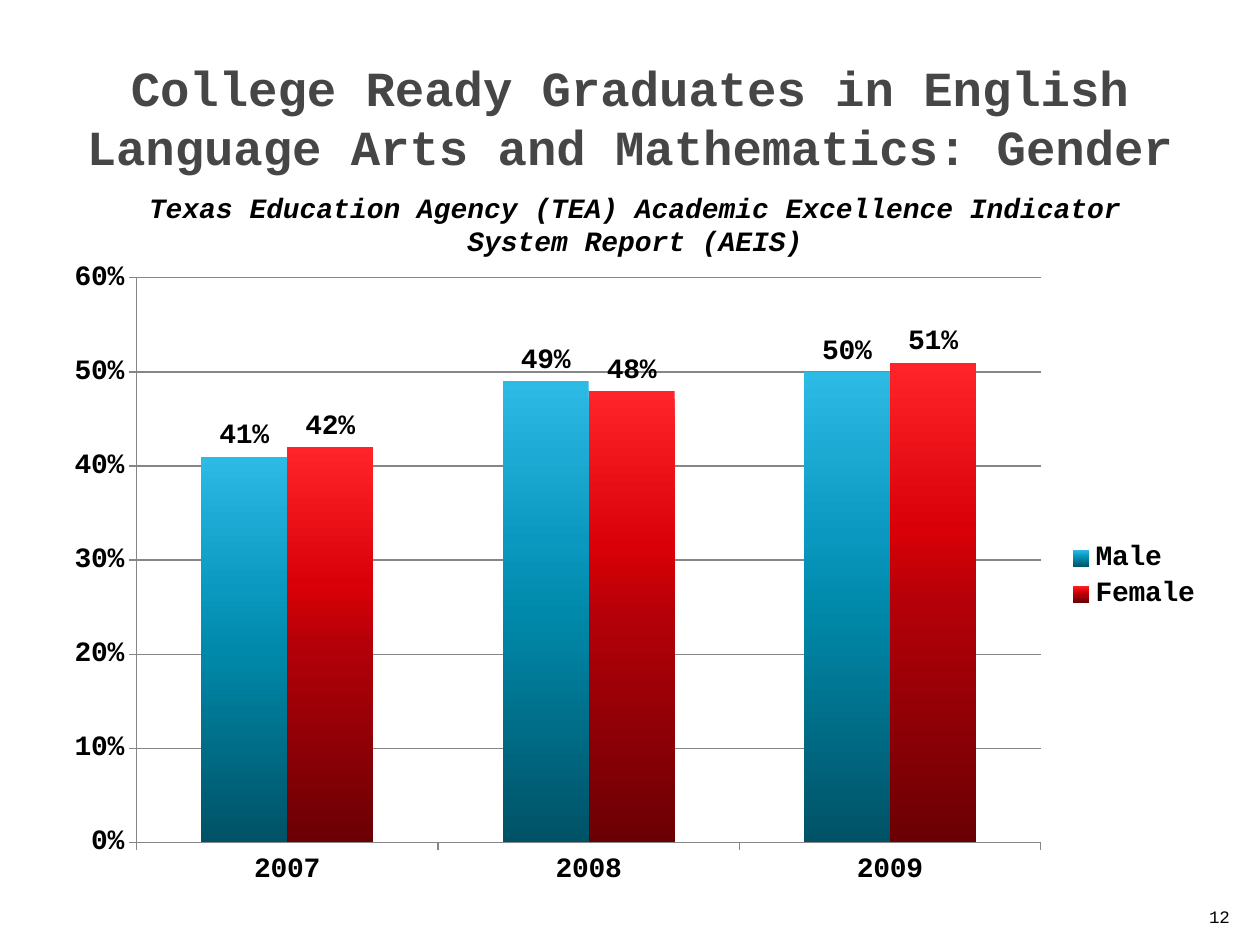
from lxml import etree
from pptx import Presentation
from pptx.chart.data import CategoryChartData
from pptx.dml.color import RGBColor
from pptx.enum.chart import XL_CHART_TYPE, XL_LABEL_POSITION, XL_LEGEND_POSITION, XL_TICK_MARK
from pptx.enum.text import MSO_ANCHOR, MSO_AUTO_SIZE, PP_ALIGN
from pptx.oxml import parse_xml
from pptx.oxml.ns import nsdecls, qn
from pptx.util import Inches, Pt

COLUMNS = XL_CHART_TYPE.COLUMN_CLUSTERED
OUTSIDE_END = XL_LABEL_POSITION.OUTSIDE_END
LEGEND_RIGHT = XL_LEGEND_POSITION.RIGHT
TICK_OUT, TICK_NONE = XL_TICK_MARK.OUTSIDE, XL_TICK_MARK.NONE
TOP, MIDDLE, BOTTOM = MSO_ANCHOR.TOP, MSO_ANCHOR.MIDDLE, MSO_ANCHOR.BOTTOM
CENTER, RIGHT = PP_ALIGN.CENTER, PP_ALIGN.RIGHT
FONT_NAME = "Courier New"
BLACK, GRAY, AXIS_GRAY = "000000", "464646", "868686"


def set_font(font, size, color=BLACK, bold=True, italic=False):
    font.name = FONT_NAME
    font.size = Pt(size)
    font.bold = bold
    font.italic = italic
    font.color.rgb = RGBColor.from_string(color)


def add_text(page, text, left, top, width, height, anchor, align, **style):
    box = page.shapes.add_textbox(Inches(left), Inches(top), Inches(width), Inches(height))
    frame = box.text_frame
    frame.text = text
    frame.word_wrap = True
    frame.vertical_anchor = anchor
    para = frame.paragraphs[0]
    para.alignment = align
    set_font(para.runs[0].font, **style)
    return box


deck = Presentation()
deck.slide_width, deck.slide_height = Inches(10), Inches(7.5)
page = deck.slides.add_slide(deck.slide_layouts[6])

# Column chart of college ready graduates
chart_data = CategoryChartData(number_format="0%")
chart_data.categories = ["2007", "2008", "2009"]
chart_data.add_series("Male", [0.41, 0.49, 0.50])
chart_data.add_series("Female", [0.42, 0.48, 0.51])
chart = page.shapes.add_chart(
    COLUMNS, Inches(0.44), Inches(2), Inches(9.2), Inches(5.15), chart_data
).chart
chart.has_title = False
set_font(chart.font, 10, bold=False)
plot = chart.plots[0]
plot.gap_width = 150
plot.overlap = 0
plot.vary_by_categories = False

# Axes, gridlines and legend
value_axis, category_axis = chart.value_axis, chart.category_axis
value_axis.minimum_scale, value_axis.maximum_scale = 0, 0.6
value_axis.major_unit = 0.1
value_axis.tick_labels.number_format = "0%"
value_axis.tick_labels.number_format_is_linked = False
value_axis.has_major_gridlines = True
for axis in (value_axis, category_axis):
    axis.major_tick_mark = TICK_OUT
    axis.minor_tick_mark = TICK_NONE
    set_font(axis.tick_labels.font, 16)
for line in (value_axis.format.line, category_axis.format.line, value_axis.major_gridlines.format.line):
    line.color.rgb = RGBColor.from_string(AXIS_GRAY)
    line.width = Pt(0.75)
chart.has_legend = True
chart.legend.position = LEGEND_RIGHT
chart.legend.include_in_layout = False
set_font(chart.legend.font, 16)

# Gradient columns, light at the top, with value labels
gradients = [
    ((0, "2DBBE5"), (35, "0A98C0"), (50, "0089AA"), (100, "005266")),
    ((0, "FF242A"), (35, "D90007"), (50, "B40008"), (100, "6A0004")),
]
for series, stops in zip(plot.series, gradients):
    series.invert_if_negative = False
    series.format.fill.gradient()
    series.format.fill.gradient_angle = 270
    stop_list = series.format.fill._fill._gradFill.find(qn("a:gsLst"))
    for old_stop in list(stop_list):
        stop_list.remove(old_stop)
    for position, color in stops:
        stop = etree.SubElement(stop_list, qn("a:gs"), pos=str(position * 1000))
        etree.SubElement(stop, qn("a:srgbClr"), val=color)
    labels = series.data_labels
    labels.show_value = True
    labels.number_format = "0%"
    labels.number_format_is_linked = False
    labels.position = OUTSIDE_END
    set_font(labels.font, 16)

# Fixed plot area, as shares of the chart size
plot_area = chart._chartSpace.chart.plotArea
for old_layout in plot_area.findall(qn("c:layout")):
    plot_area.remove(old_layout)
plot_area.insert(0, parse_xml(
    f'<c:layout {nsdecls("c")}><c:manualLayout><c:layoutTarget val="inner"/>'
    '<c:xMode val="edge"/><c:yMode val="edge"/><c:x val="0.07"/><c:y val="0.04"/>'
    '<c:w val="0.78"/><c:h val="0.87"/></c:manualLayout></c:layout>'
))

# Title, source line and page number
add_text(page, "College Ready Graduates in English Language Arts and Mathematics: Gender",
         0.5, 0.3, 9, 1.25, MIDDLE, CENTER, size=28, color=GRAY)
subtitle = add_text(
    page, "Texas Education Agency (TEA) Academic Excellence Indicator System Report (AEIS)",
    0.83, 1.46, 8.42, 0.37, TOP, CENTER, size=16, italic=True)
subtitle.text_frame.auto_size = MSO_AUTO_SIZE.SHAPE_TO_FIT_TEXT
add_text(page, "12", 9.46, 7.01, 0.4, 0.4, BOTTOM, RIGHT, size=10, bold=False)

deck.save("out.pptx")
